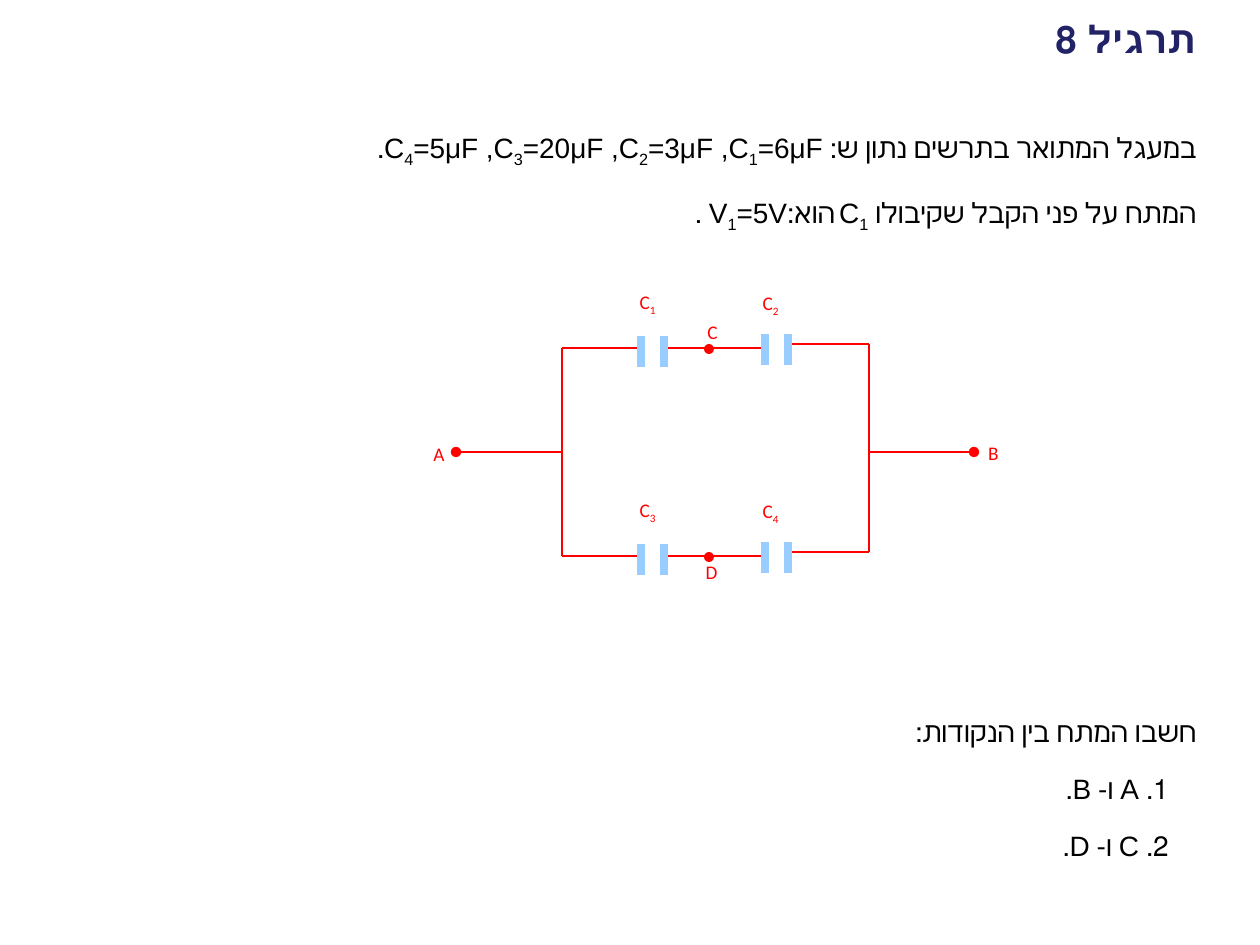
"""Build the slide with the capacitor circuit exercise."""
from lxml.etree import SubElement
from pptx import Presentation
from pptx.dml.color import RGBColor
from pptx.enum.shapes import MSO_CONNECTOR, MSO_SHAPE
from pptx.enum.text import MSO_ANCHOR, PP_ALIGN
from pptx.oxml.ns import qn
from pptx.util import Pt

PX = 914400 / 126
COLORS = {"title": "222267", "text": "000000", "wire": "FF0000", "plate": "99CCFF"}


def emu(*lengths):
    return [round(n * PX) for n in lengths]


def write(tf, text, *, size, color, font="Arial", bold=False, spacing=1.0,
          after=0, anchor=MSO_ANCHOR.TOP):
    tf.word_wrap = True
    tf.vertical_anchor = anchor
    for i, line in enumerate(text.split("\n")):
        p = tf.add_paragraph() if i else tf.paragraphs[0]
        p.alignment = PP_ALIGN.RIGHT
        p._p.get_or_add_pPr().set("rtl", "1")
        p.line_spacing = spacing
        p.space_before, p.space_after = Pt(0), Pt(after)
        for j, part in enumerate(line.split("_")):
            if not part:
                continue
            r = p.add_run()
            r.text = part
            r.font.name, r.font.size, r.font.bold = font, Pt(size), bold
            r.font.color.rgb = RGBColor.from_string(COLORS[color])
            if j % 2:
                r._r.get_or_add_rPr().set("baseline", "-25000")


class Circuit:
    """Holds the style and the current slide."""

    def __init__(self, prs):
        self.slide = prs.slides.add_slide(prs.slide_layouts[5])

    def title(self, text, x, y, w, h):
        sp = self.slide.shapes.title
        sp.left, sp.top, sp.width, sp.height = emu(x, y, w, h)
        write(sp.text_frame, text, size=21.6, color="title", bold=True,
              anchor=MSO_ANCHOR.MIDDLE)

    def body(self, text, x, y, w, h):
        sp = self.slide.shapes.add_textbox(*emu(x, y, w, h))
        write(sp.text_frame, text, size=16, color="text", spacing=1.7)

    def label(self, text, x, y, w=95, h=48):
        sp = self.slide.shapes.add_textbox(*emu(x, y, w, h))
        write(sp.text_frame, text, size=11, color="wire", font="Calibri", after=10)

    def line(self, x1, y1, x2, y2, color="wire", width=1.5, end=None):
        sp = self.slide.shapes.add_connector(
            MSO_CONNECTOR.STRAIGHT, *emu(x1, y1, x2, y2))
        sp.line.color.rgb = RGBColor.from_string(COLORS[color])
        sp.line.width = Pt(width)
        spPr = sp._element.spPr
        if end:
            SubElement(spPr.find(qn("a:ln")), qn(f"a:{end}"), type="oval")
        SubElement(spPr, qn("a:effectLst"))

    def capacitor(self, x, y):
        for plate in (x, x + 23):
            self.line(plate, y, plate, y + 31, color="plate", width=4.5)

    def dot(self, x, y, d=10):
        sp = self.slide.shapes.add_shape(
            MSO_SHAPE.OVAL, *emu(x - d / 2, y - d / 2, d, d))
        sp.shadow.inherit = False
        sp.fill.solid()
        sp.fill.fore_color.rgb = RGBColor.from_string(COLORS["wire"])
        sp.line.fill.background()

    def branch(self, y, left, right):
        self.line(562, y, 641, y)
        self.line(668, y, 761, y)
        self.line(790, y - 4, 869, y - 4)
        self.capacitor(641, y - 12)
        self.capacitor(765, y - 14)
        self.label(left, 573, y - 64)
        self.label(right, 728, y - 63, w=63)
        self.dot(709, y + 1)


def main():
    prs = Presentation()
    prs.slide_width, prs.slide_height = emu(1260, 945)
    s = Circuit(prs)
    s.title("תרגיל 8", 150, 14, 1058, 49)
    s.body("במעגל המתואר בתרשים נתון ש: C_4_=5μF ,C_3_=20μF ,C_2_=3μF ,C_1_=6μF.\n"
           "המתח על פני הקבל שקיבולו C_1 _הוא:V_1_=5V .", 74, 98, 1135, 150)
    top, bottom, middle = 348, 556, 452
    s.branch(top, "C_1_", "C_2_")
    s.branch(bottom, "C_3_", "C_4_")
    s.line(562, top, 562, bottom)
    s.line(869, top - 4, 869, bottom - 4)
    s.line(456, middle, 561, middle, end="headEnd")
    s.line(869, middle, 974, middle, end="tailEnd")
    for name, x, y in (("A", 362, 436), ("B", 916, 435),
                       ("C", 635, 314), ("D", 635, 554)):
        s.label(name, x, y)
    s.body("חשבו המתח בין הנקודות:", 74, 685, 1135, 65)
    s.body("1. A ו- B.\n2. C ו- D.", 74, 742, 1107, 125)
    prs.save("out.pptx")


if __name__ == "__main__":
    main()
